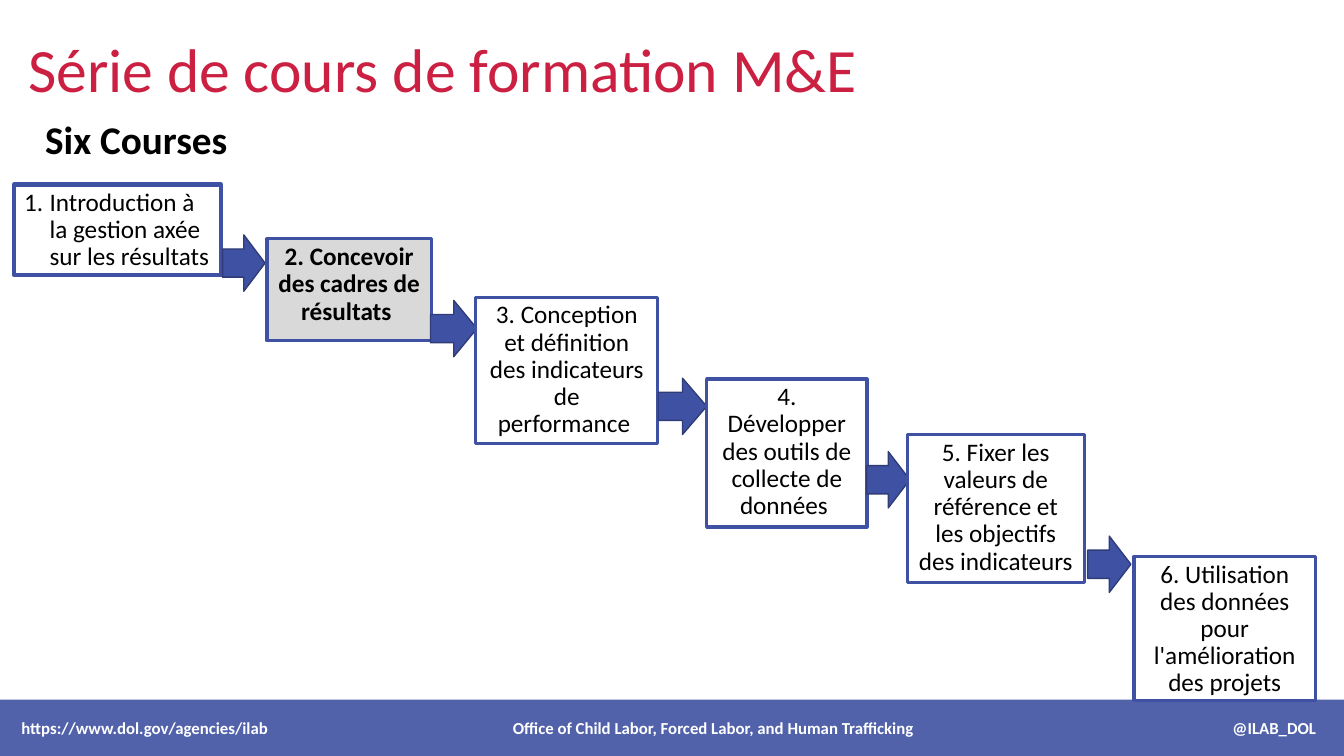
import pptx
import pptx.util
import pptx.dml.color
import pptx.enum.shapes
import pptx.enum.text
import pptx.oxml.ns
import lxml.etree

Cm = pptx.util.Cm
Pt = pptx.util.Pt
RGBColor = pptx.dml.color.RGBColor
SHAPE = pptx.enum.shapes.MSO_SHAPE
ALIGN = pptx.enum.text.PP_ALIGN
ANCHOR = pptx.enum.text.MSO_ANCHOR
qn = pptx.oxml.ns.qn

BLUE = RGBColor(0x3F, 0x51, 0xA2)
DARK_BLUE = RGBColor(0x2F, 0x3C, 0x78)
RED = RGBColor(0xCB, 0x20, 0x42)
GREY = RGBColor(0xD9, 0xD9, 0xD9)
WHITE = RGBColor(0xFF, 0xFF, 0xFF)
BLACK = RGBColor(0, 0, 0)

PAGE_WIDTH, PAGE_HEIGHT = 33.87, 19.05
ARROW_HEIGHT = 1.42

COURSES = [
    ("Introduction à la gestion axée sur les résultats", (0.36, 4.65, 5.21, 2.29)),
    ("2. Concevoir des cadres de résultats ", (6.73, 6.02, 4.14, 2.57)),
    ("3. Conception et définition des indicateurs de performance ", (11.99, 7.49, 4.59, 3.68)),
    ("4. Développer des outils de collecte de données ", (17.81, 9.55, 4.04, 3.73)),
    ("5. Fixer les valeurs de référence et les objectifs des indicateurs ", (22.86, 10.95, 4.47, 3.73)),
    ("6. Utilisation des données pour l'amélioration des projets", (28.58, 14.02, 4.57, 3.63)),
]
ARROWS = [
    (5.61, 5.92, 1.07),
    (10.85, 7.57, 1.17),
    (16.59, 9.53, 1.22),
    (21.84, 11.38, 1.09),
    (27.41, 13.51, 1.09),
]
CURRENT_COURSE = 2


def write_text(shape, text, size=18, color=BLACK, bold=False, align=ALIGN.LEFT,
               anchor=ANCHOR.TOP, spacing=0.9, wrap=True):
    frame = shape.text_frame
    frame.word_wrap = wrap
    frame.vertical_anchor = anchor
    para = frame.paragraphs[0]
    para.alignment = align
    para.line_spacing = spacing
    span = para.add_run()
    span.text = text
    span.font.name = "Calibri"
    span.font.size = Pt(size)
    span.font.bold = bold
    span.font.color.rgb = color
    return para


def add_block(page, kind, box, fill, line=None, line_width=1):
    shape = page.shapes.add_shape(kind, *map(Cm, box))
    shape.shadow.inherit = False
    shape.fill.solid()
    shape.fill.fore_color.rgb = fill
    if line is None:
        shape.line.fill.background()
    else:
        shape.line.color.rgb = line
        shape.line.width = Pt(line_width)
    return shape


def number_paragraph(para):
    properties = para._p.get_or_add_pPr()
    properties.set("marL", str(Cm(0.64)))
    properties.set("indent", str(-Cm(0.64)))
    lxml.etree.SubElement(properties, qn("a:buFont"), typeface="+mj-lt")
    lxml.etree.SubElement(properties, qn("a:buAutoNum"), type="arabicPeriod")


def add_heading(page, box):
    left, top, width, height = box
    title = page.shapes.add_textbox(*map(Cm, box))
    write_text(title, "Série de cours de formation M&E", size=44, color=RED,
               anchor=ANCHOR.MIDDLE)
    subtitle = page.shapes.add_textbox(Cm(left + 0.43), Cm(top + 2.79), Cm(5.16), Cm(1.45))
    write_text(subtitle, "Six Courses", size=28, bold=True, spacing=1, wrap=False)


def add_course(page, number, text, box):
    first = number == 1
    current = number == CURRENT_COURSE
    shape = add_block(page, SHAPE.RECTANGLE, box, GREY if current else WHITE,
                      BLUE, 3 if first else 2.25)
    para = write_text(shape, text, bold=current,
                      align=ALIGN.LEFT if first else ALIGN.CENTER)
    if first:
        number_paragraph(para)


def add_staircase(page):
    for number, (text, box) in enumerate(COURSES, start=1):
        add_course(page, number, text, box)
        if number <= len(ARROWS):
            arrow_box = (*ARROWS[number - 1], ARROW_HEIGHT)
            add_block(page, SHAPE.RIGHT_ARROW, arrow_box, BLUE, DARK_BLUE)


def add_footer(page, box):
    bar = add_block(page, SHAPE.RECTANGLE, box, BLUE)
    color = bar._element.spPr.find(qn("a:solidFill"))[0]
    lxml.etree.SubElement(color, qn("a:alpha"), val="90000")
    bar.text_frame.margin_left = Cm(0.54)
    parts = [
        "https://www.dol.gov/agencies/ilab",
        "Office of Child Labor, Forced Labor, and Human Trafficking",
        "@ILAB_DOL",
    ]
    para = write_text(bar, "\t".join(parts), size=12, color=WHITE, bold=True,
                      anchor=ANCHOR.MIDDLE, spacing=1)
    tabs = lxml.etree.SubElement(para._p.get_or_add_pPr(), qn("a:tabLst"))
    for position, align in [(17.44, "ctr"), (32.63, "r")]:
        lxml.etree.SubElement(tabs, qn("a:tab"), pos=str(Cm(position)), algn=align)


def main():
    deck = pptx.Presentation()
    deck.slide_width = Cm(PAGE_WIDTH)
    deck.slide_height = Cm(PAGE_HEIGHT)
    page = deck.slides.add_slide(deck.slide_layouts[6])
    add_heading(page, (0.46, 0, 29.21, 3.68))
    add_staircase(page)
    add_footer(page, (0, 17.63, 33.96, 1.42))
    deck.save("out.pptx")


if __name__ == "__main__":
    main()
